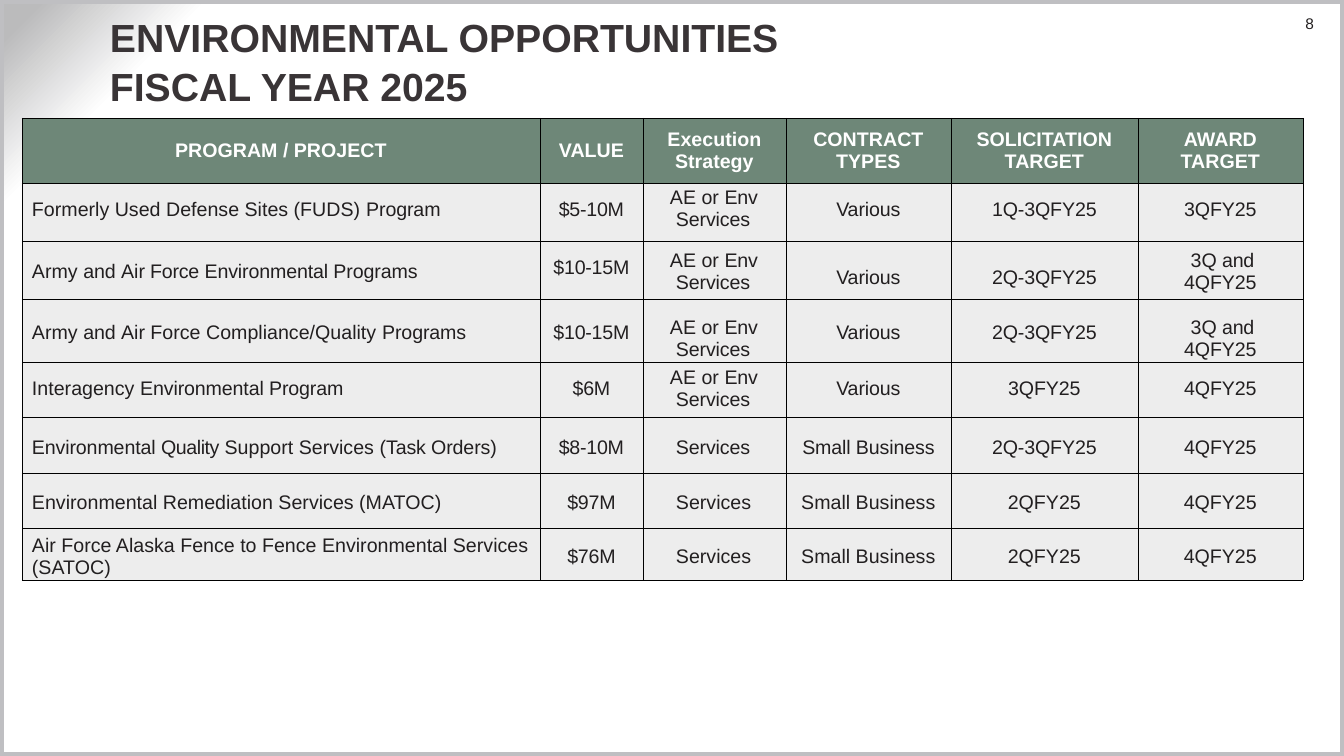
from pptx import Presentation
from pptx.dml.color import RGBColor
from pptx.enum.shapes import MSO_SHAPE
from pptx.enum.text import MSO_ANCHOR, PP_ALIGN
from pptx.oxml import parse_xml
from pptx.oxml.ns import nsdecls, qn
from pptx.util import Pt

WIDE, HIGH = 1344, 756
SCALE = 12192000 / WIDE
HEX = {
    "title": "393436", "text": "221F20", "white": "FFFFFF", "head": "6E8778",
    "body": "EDEDED", "rule": "000000", "frame": "BFBFC2", "glow": "BBBBBC",
}
ANCHOR = {"T": MSO_ANCHOR.TOP, "M": MSO_ANCHOR.MIDDLE}

# Table content: a cell is plain text or runs of (text, letter spacing)
COLS = [518, 103, 143, 165, 187, 165]
HEIGHTS = [65, 58, 58, 61, 55, 56, 55, 49]
HEADS = ["PROGRAM / PROJECT", "VALUE", "Execution Strategy",
         "CONTRACT TYPES", "SOLICITATION TARGET", "AWARD TARGET"]
AE = [("AE or ", 0), ("Env ", -20), ("Services", -10)]
SPLIT = [("3Q", 0), (" and ", -20), ("4QFY25", -10)]

# Each row: cells, top insets, anchors, letter spacing of plain cells
ROWS = [
    ([[("Formerly Used Defense Sites (FUDS) ", 0), ("Program", -10)],
      "$5-10M", AE, "Various", "1Q-3QFY25", "3QFY25"],
     [16, 16, 4, 16, 16, 16], "TTTTTT", -10),
    ([[("Army ", 0), ("and ", -10), ("Air", 0), (" Force ", -20),
       ("Environmental Programs", -10)],
      "$10-15M", AE, "Various", "2Q-3QFY25", SPLIT],
     [4, 16, 4, 16, 16, 4], "MTMMMM", -10),
    ([[("Army ", 0), ("and ", -10), ("Air Force Compliance/Quality ", 0),
       ("Programs", -10)],
      "$10-15M", AE, "Various", "2Q-3QFY25", SPLIT],
     [4, 5, 16, 5, 5, 16], "MMMMMM", -10),
    ([[("Interagency ", 0), ("Environmental Program", -10)],
      "$6M", AE, "Various", "3QFY25", "4QFY25"],
     [16, 16, 5, 16, 16, 16], "TTTTTT", -10),
    ([[("Environmental ", -10), ("Quality ", -30), ("Support Services ", 0),
       ("(Task Orders)", -10)],
      "$8-10M", "Services", "Small Business", "2Q-3QFY25", "4QFY25"],
     [5] * 6, "MMMMMM", -10),
    (["Environmental Remediation Services (MATOC)",
      "$97M", "Services", "Small Business", "2QFY25", "4QFY25"],
     [5] * 6, "MMMMMM", 0),
    (["Air Force Alaska Fence to Fence Environmental Services (SATOC)",
      "$76M", "Services", "Small Business", "2QFY25", "4QFY25"],
     [5] * 6, "MMMMMM", 0),
]


def px(n):
    return round(n * SCALE)


def rgb(name):
    return RGBColor.from_string(HEX[name])


def inset(box, left, top, right, low):
    box.margin_left, box.margin_top = px(left), px(top)
    box.margin_right, box.margin_bottom = px(right), px(low)


def add_run(para, text, size, color, bold=False, gap=0):
    run = para.add_run()
    run.text = text
    font = run.font
    font.name, font.size, font.bold = "Arial", Pt(size), bold
    font.color.rgb = rgb(color)
    if gap:
        run._r.get_or_add_rPr().set("spc", str(gap))


def add_box(slide, left, top, width, height):
    box = slide.shapes.add_textbox(px(left), px(top), px(width), px(height))
    box.text_frame.word_wrap = True
    return box.text_frame


def indent(para, left, first=0, right=0):
    props = para._p.get_or_add_pPr()
    for key, value in (("marL", left), ("marR", right), ("indent", first)):
        props.set(key, str(px(value)))


def paint(cell, color):
    # Borders come before the fill in the cell properties
    props = cell._tc.get_or_add_tcPr()
    for side in "LRTB":
        props.append(parse_xml(
            f'<a:ln{side} {nsdecls("a")} w="3175"><a:solidFill>'
            f'<a:srgbClr val="{HEX["rule"]}"/></a:solidFill></a:ln{side}>'))
    cell.fill.solid()
    cell.fill.fore_color.rgb = rgb(color)


def fill_head(cell, text):
    paint(cell, "head")
    inset(cell, 10, 5, 10, 5)
    cell.vertical_anchor = MSO_ANCHOR.MIDDLE
    para = cell.text_frame.paragraphs[0]
    para.alignment = PP_ALIGN.CENTER
    add_run(para, text, 14, "white", True)


def fill_cell(cell, col, item, top, anchor, gap):
    paint(cell, "body")
    inset(cell, 0, top, 0, 0)
    cell.vertical_anchor = ANCHOR[anchor]
    para = cell.text_frame.paragraphs[0]
    para.alignment = PP_ALIGN.LEFT if col in (0, 2) else PP_ALIGN.CENTER
    if col == 0:
        indent(para, 10)
    elif col == 2:
        indent(para, 33, -6 if item is AE else 0)
    elif item is SPLIT:
        indent(para, 40, 4, 40)
    runs = [(item, -20 if col == 1 else gap)] if isinstance(item, str) else item
    for text, space in runs:
        add_run(para, text, 14, "text", gap=space)


def add_grid(slide):
    frame = slide.shapes.add_table(len(HEIGHTS), len(COLS), px(22), px(118),
                                   px(sum(COLS)), px(sum(HEIGHTS)))
    table = frame.table
    table.horz_banding = False
    for col, width in zip(table.columns, COLS):
        col.width = px(width)
    for row, height in zip(table.rows, HEIGHTS):
        row.height = px(height)
    for col, text in enumerate(HEADS):
        fill_head(table.cell(0, col), text)
    for row, (items, tops, marks, gap) in enumerate(ROWS, 1):
        for col, (item, top, mark) in enumerate(zip(items, tops, marks)):
            fill_cell(table.cell(row, col), col, item, top, mark, gap)


def add_back(slide):
    slide.background.fill.solid()
    props = slide._element.find(".//" + qn("p:bgPr"))
    stops = "".join(
        f'<a:gs pos="{pos}000"><a:srgbClr val="{HEX[name]}"/></a:gs>'
        for pos, name in ((87, "white"), (90, "white"), (98, "glow")))
    props.replace(props[0], parse_xml(
        f'<a:gradFill {nsdecls("a")} rotWithShape="1"><a:gsLst>{stops}</a:gsLst>'
        '<a:path path="circle"><a:fillToRect l="100000" t="100000"/></a:path>'
        '</a:gradFill>'))


def add_frame(slide):
    rect = slide.shapes.add_shape(MSO_SHAPE.RECTANGLE, 0, 0, px(WIDE), px(HIGH))
    rect.shadow.inherit = False
    rect.fill.background()
    rect.line.color.rgb = rgb("frame")
    rect.line.width = Pt(6)


def add_title(slide):
    frame = add_box(slide, 105, 14, 1145, 92)
    inset(frame, 5, 0, 5, 0)
    frame.vertical_anchor = MSO_ANCHOR.MIDDLE
    para = frame.paragraphs[0]
    para.line_spacing = 1.04
    add_run(para, "ENVIRONMENTAL OPPORTUNITIES", 28, "title", True)
    para.add_line_break()
    add_run(para, "FISCAL YEAR 2025", 28, "title", True)


def add_page(slide):
    frame = add_box(slide, 1254, 14, 60, 19)
    inset(frame, 10, 0, 0, 0)
    para = frame.paragraphs[0]
    para.alignment = PP_ALIGN.RIGHT
    add_run(para, "8", 11, "text")


def main():
    deck = Presentation()
    deck.slide_width, deck.slide_height = px(WIDE), px(HIGH)
    slide = deck.slides.add_slide(deck.slide_layouts[6])
    # Backdrop
    add_back(slide)
    add_frame(slide)
    # Heading and page number
    add_page(slide)
    add_title(slide)
    # Opportunities table
    add_grid(slide)
    deck.save("out.pptx")


if __name__ == "__main__":
    main()
